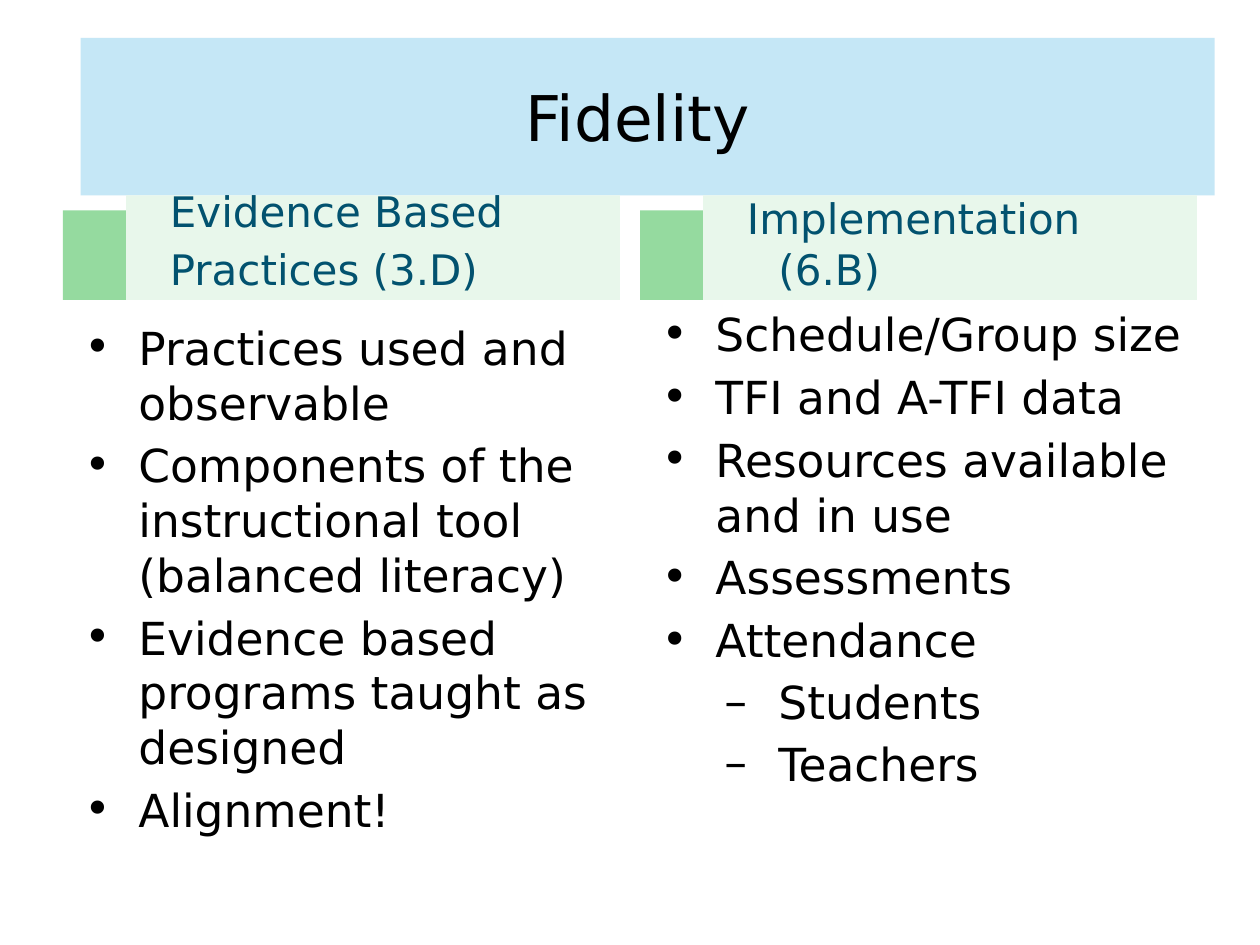
from lxml import etree
from pptx import Presentation
from pptx.dml.color import RGBColor
from pptx.enum.shapes import MSO_SHAPE
from pptx.enum.text import MSO_ANCHOR, PP_ALIGN
from pptx.oxml.ns import qn
from pptx.util import Inches, Pt

RECTANGLE = MSO_SHAPE.RECTANGLE
CENTER, LEFT = PP_ALIGN.CENTER, PP_ALIGN.LEFT
MIDDLE, BOTTOM = MSO_ANCHOR.MIDDLE, MSO_ANCHOR.BOTTOM

FONT = "DejaVu Sans"
BLACK = RGBColor(0x00, 0x00, 0x00)
TEAL = RGBColor(0x02, 0x52, 0x6F)
SKY = RGBColor(0xA9, 0xDC, 0xF2)
GREEN = RGBColor(0x95, 0xDA, 0x9F)
PALE_GREEN = RGBColor(0xE8, 0xF7, 0xEB)

COLUMN_WIDTH = 4.42
COLUMN_BOTTOM = 6.7
HEADING_TOP, HEADING_BOTTOM = 1.55, 2.38
MARKER_TOP, MARKER_WIDTH = 1.67, 0.5

# Each column: left edge, top of the list, heading lines, (level, text) items
COLUMNS = [
    (0.5, 2.49, ["Evidence Based", "Practices (3.D)"], [
        (0, "Practices used and observable"),
        (0, "Components of the instructional tool (balanced literacy)"),
        (0, "Evidence based programs taught as designed"),
        (0, "Alignment!"),
    ]),
    (5.08, 2.38, ["Implementation (6.B)"], [
        (0, "Schedule/Group size"),
        (0, "TFI and A-TFI data"),
        (0, "Resources available and in use"),
        (0, "Assessments"),
        (0, "Attendance"),
        (1, "Students"),
        (1, "Teachers"),
    ]),
]


def add_block(slide, left, top, width, height, color):
    shape = slide.shapes.add_shape(
        RECTANGLE, Inches(left), Inches(top), Inches(width), Inches(height))
    shape.shadow.inherit = False
    shape.fill.solid()
    shape.fill.fore_color.rgb = color
    shape.line.fill.background()
    return shape


def add_paragraph(text_frame, index, text, size, color, space=0, align=LEFT):
    paragraph = text_frame.paragraphs[0] if index == 0 else text_frame.add_paragraph()
    paragraph.text = text
    paragraph.alignment = align
    paragraph.space_before = Pt(space)
    font = paragraph.runs[0].font
    font.name, font.size, font.color.rgb = FONT, Pt(size), color
    return paragraph


def set_indent(paragraph, margin, first_line, bullet=None):
    properties = paragraph._p.get_or_add_pPr()
    properties.set("marL", str(Inches(margin)))
    properties.set("indent", str(Inches(first_line)))
    if bullet:
        bullet_font = etree.SubElement(properties, qn("a:buFont"))
        bullet_font.set("typeface", FONT)
        etree.SubElement(properties, qn("a:buChar")).set("char", bullet)


def add_title(slide, left, top, width, height):
    title = add_block(slide, left, top, width, height, SKY)
    fill_color = title.fill._xPr.find(qn("a:solidFill"))[0]
    etree.SubElement(fill_color, qn("a:alpha")).set("val", "67000")
    title.text_frame.word_wrap = True
    title.text_frame.vertical_anchor = MIDDLE
    add_paragraph(title.text_frame, 0, "Fidelity ", 36, BLACK, align=CENTER)


def add_heading(slide, left, top, width, height, lines):
    # Green marker, then the heading panel to its right
    bottom = top + height
    add_block(slide, left, MARKER_TOP, MARKER_WIDTH, bottom - MARKER_TOP, GREEN)
    panel = add_block(slide, left + MARKER_WIDTH, top,
                      width - MARKER_WIDTH, height, PALE_GREEN)
    panel.text_frame.word_wrap = True
    panel.text_frame.vertical_anchor = BOTTOM
    for index, line in enumerate(lines):
        paragraph = add_paragraph(panel.text_frame, index, line, 24, TEAL, 4.2)
        set_indent(paragraph, 0.5, -0.25)


def add_list(slide, left, top, width, height, items):
    box = slide.shapes.add_textbox(
        Inches(left), Inches(top), Inches(width), Inches(height))
    box.text_frame.word_wrap = True
    for index, (level, text) in enumerate(items):
        space, bullet = ((4.8, "•"), (4, "–"))[level]
        paragraph = add_paragraph(box.text_frame, index, text, 26, BLACK, space)
        paragraph.level = level
        set_indent(paragraph, 0.5 * (level + 1), -0.43, bullet)


def main():
    presentation = Presentation()
    presentation.slide_width, presentation.slide_height = Inches(10), Inches(7.5)
    slide = presentation.slides.add_slide(presentation.slide_layouts[6])

    add_title(slide, 0.64, 0.3, 9, 1.25)
    for left, list_top, heading, items in COLUMNS:
        add_heading(slide, left, HEADING_TOP, COLUMN_WIDTH,
                    HEADING_BOTTOM - HEADING_TOP, heading)
        add_list(slide, left, list_top, COLUMN_WIDTH,
                 COLUMN_BOTTOM - list_top, items)

    presentation.save("out.pptx")


if __name__ == "__main__":
    main()
